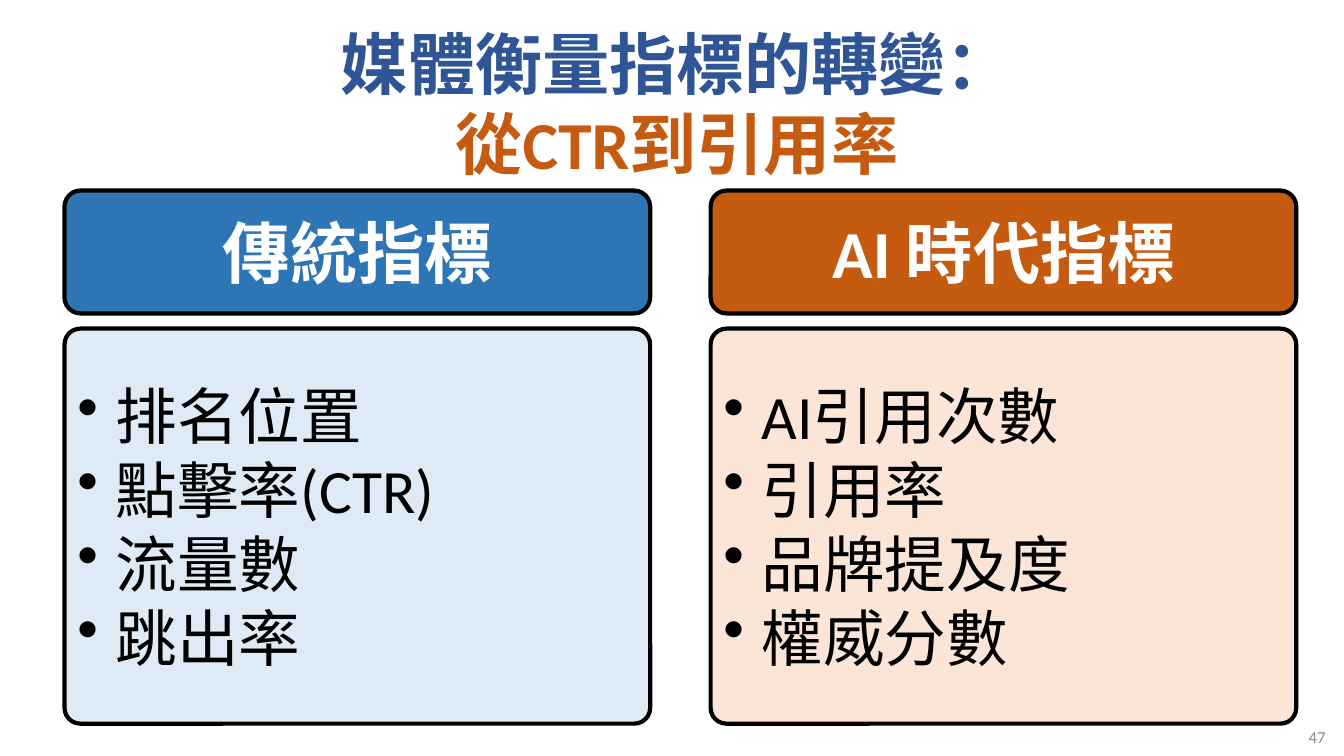
import pptx
import pptx.dml.color
import pptx.enum.shapes
import pptx.enum.text
import pptx.oxml
import pptx.util
from pptx.util import Pt

RGBColor = pptx.dml.color.RGBColor
ALIGN = pptx.enum.text.PP_ALIGN

TITLE_BLUE = RGBColor(0x2F, 0x55, 0x97)
HEADER_BLUE = RGBColor(0x2E, 0x75, 0xB6)
PALE_BLUE = RGBColor(0xDE, 0xEB, 0xF7)
ORANGE = RGBColor(0xC5, 0x5A, 0x11)
PALE_ORANGE = RGBColor(0xFB, 0xE5, 0xD6)
BLACK = RGBColor(0, 0, 0)
WHITE = RGBColor(0xFF, 0xFF, 0xFF)
GRAY = RGBColor(0x8C, 0x8C, 0x8C)

FONT = "Calibri"
CARD_WIDTH = 418.3
HEADER_TOP, HEADER_HEIGHT = 136.1, 87.8
BODY_TOP, BODY_HEIGHT = 234.7, 282.2
BULLET_INDENT = 27.4

COLUMNS = [
    (46.1, "傳統指標", HEADER_BLUE, PALE_BLUE,
     ["排名位置", "點擊率(CTR)", "流量數", "跳出率"]),
    (507.6, "AI 時代指標", ORANGE, PALE_ORANGE,
     ["AI引用次數", "引用率", "品牌提及度", "權威分數"]),
]


def add_run(paragraph, text, size, color, bold=False):
    run = paragraph.add_run()
    run.text = text
    run.font.name = FONT
    run.font.size = Pt(size)
    run.font.bold = bold
    run.font.color.rgb = color


def set_frame(frame, side_inset, end_inset):
    frame.word_wrap = True
    frame.vertical_anchor = pptx.enum.text.MSO_ANCHOR.MIDDLE
    frame.margin_left = frame.margin_right = Pt(side_inset)
    frame.margin_top = frame.margin_bottom = Pt(end_inset)


def add_label(slide, left, top, width, height, align):
    """Add a text box and return its first paragraph."""
    frame = slide.shapes.add_textbox(
        Pt(left), Pt(top), Pt(width), Pt(height)).text_frame
    set_frame(frame, 7.2, 3.6)
    frame.paragraphs[0].alignment = align
    return frame.paragraphs[0]


def add_card(slide, left, top, height, rounding, fill, side_inset):
    """Add an outlined rounded card and return its text frame."""
    card = slide.shapes.add_shape(
        pptx.enum.shapes.MSO_SHAPE.ROUNDED_RECTANGLE,
        Pt(left), Pt(top), Pt(CARD_WIDTH), Pt(height))
    card.adjustments[0] = rounding
    card.shadow.inherit = False
    card.fill.solid()
    card.fill.fore_color.rgb = fill
    card.line.color.rgb = BLACK
    card.line.width = Pt(3)
    set_frame(card.text_frame, side_inset, 0)
    return card.text_frame


def add_bullet(paragraph, text):
    paragraph.alignment = ALIGN.LEFT
    properties = paragraph._p.get_or_add_pPr()
    properties.set("marL", str(Pt(BULLET_INDENT)))
    properties.set("indent", str(-Pt(BULLET_INDENT)))
    properties.append(pptx.oxml.parse_xml(
        '<a:buChar xmlns:a="http://schemas.openxmlformats.org/drawingml/2006/main"'
        ' char="•"/>'))
    add_run(paragraph, text, 44, BLACK)


def add_column(slide, left, heading, header_fill, body_fill, metrics):
    header = add_card(slide, left, HEADER_TOP, HEADER_HEIGHT, 0.13, header_fill, 0)
    header.paragraphs[0].alignment = ALIGN.CENTER
    add_run(header.paragraphs[0], heading, 48, WHITE, bold=True)

    body = add_card(slide, left, BODY_TOP, BODY_HEIGHT, 0.04, body_fill, 5.8)
    for index, metric in enumerate(metrics):
        add_bullet(body.add_paragraph() if index else body.paragraphs[0], metric)


def main():
    deck = pptx.Presentation()
    deck.slide_width, deck.slide_height = Pt(960), Pt(540)
    slide = deck.slides.add_slide(deck.slide_layouts[6])

    # Title in two colours
    title = add_label(slide, 41.8, 10.8, 883.4, 125.3, ALIGN.CENTER)
    add_run(title, "媒體衡量指標的轉變：", 48, TITLE_BLUE, bold=True)
    title.add_line_break()
    add_run(title, "從CTR到引用率", 48, ORANGE, bold=True)

    # Old and new metrics side by side
    for column in COLUMNS:
        add_column(slide, *column)

    # Page number
    page_number = add_label(slide, 878.4, 517, 75.6, 18.7, ALIGN.RIGHT)
    add_run(page_number, "47", 12, GRAY)

    deck.save("out.pptx")


if __name__ == "__main__":
    main()
